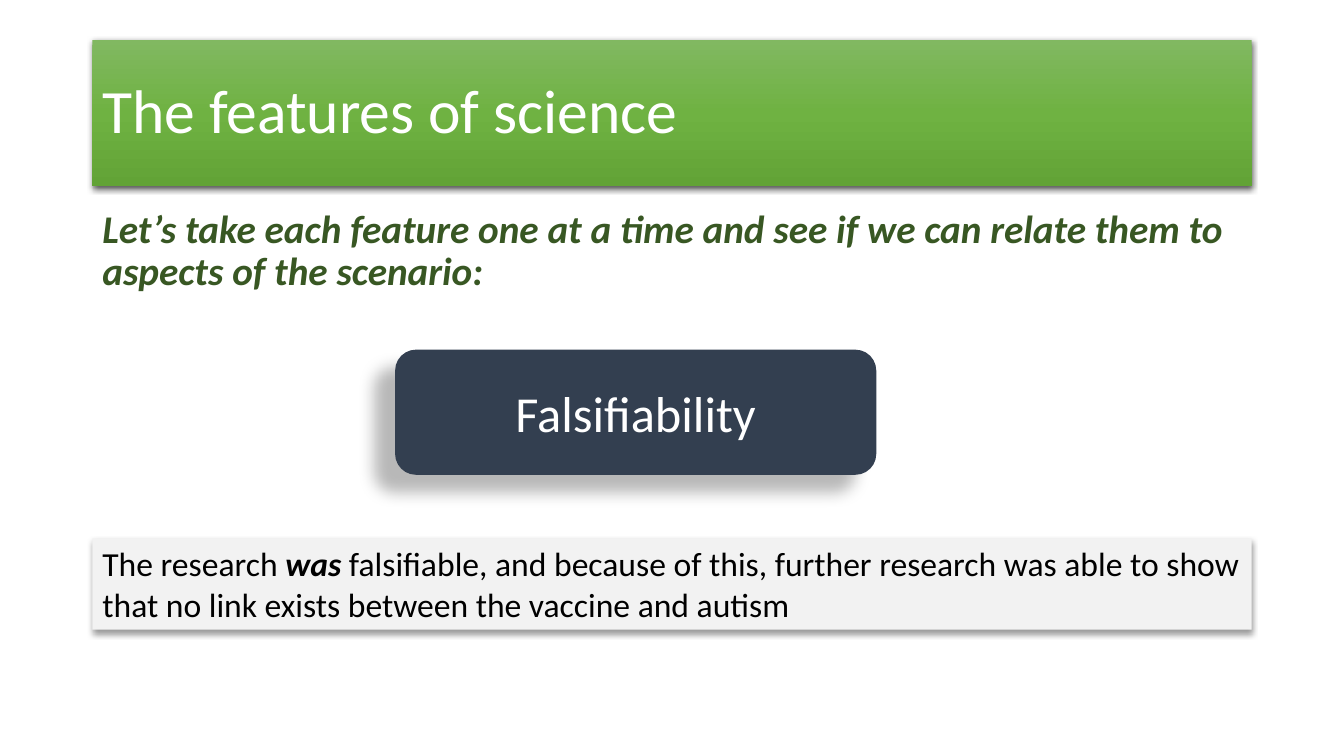
from lxml import etree
from pptx import Presentation
from pptx.dml.color import RGBColor
from pptx.enum.shapes import MSO_SHAPE
from pptx.enum.text import MSO_ANCHOR, PP_ALIGN
from pptx.oxml.ns import qn
from pptx.util import Inches, Pt

RECT, ROUNDED = MSO_SHAPE.RECTANGLE, MSO_SHAPE.ROUNDED_RECTANGLE
TOP, MIDDLE = MSO_ANCHOR.TOP, MSO_ANCHOR.MIDDLE
LEFT, CENTER = PP_ALIGN.LEFT, PP_ALIGN.CENTER

# Shares of the slide, in percent
MARGIN, CONTENT_WIDTH = 6.88, 86.25


def color(hex_string):
    return RGBColor.from_string(hex_string)


def add_color(parent, hex_string):
    return etree.SubElement(parent, qn("a:srgbClr"), val=hex_string)


class SlideBuilder:
    font = "Calibri"

    def __init__(self, deck):
        self.width, self.height = deck.slide_width, deck.slide_height
        self.slide = deck.slides.add_slide(deck.slide_layouts[6])

    def box(self, left, top, width, height):
        """Turn percentages of the slide into lengths."""
        return (int(self.width * left / 100), int(self.height * top / 100),
                int(self.width * width / 100), int(self.height * height / 100))

    def text(self, holder, runs, size, hex_string, anchor=TOP, align=LEFT,
             spacing=1.0, before=0, emphasis=False):
        """Write runs of (text, emphasised) as one paragraph."""
        frame = holder.text_frame
        frame.word_wrap, frame.vertical_anchor = True, anchor
        paragraph = frame.paragraphs[0]
        paragraph.alignment = align
        paragraph.line_spacing, paragraph.space_before = spacing, Pt(before)
        font = paragraph.font
        font.name, font.size = self.font, Pt(size)
        font.color.rgb = color(hex_string)
        font.bold = font.italic = emphasis
        for words, stressed in runs:
            run = paragraph.add_run()
            run.text = words
            if stressed:
                run.font.bold = run.font.italic = True

    def text_box(self, box, runs, size, hex_string, **style):
        holder = self.slide.shapes.add_textbox(*self.box(*box))
        self.text(holder, runs, size, hex_string, **style)

    def panel(self, kind, box, fills, shadow, runs, size, hex_string, **style):
        """Add a shape with one fill colour, or several for a gradient."""
        shape = self.slide.shapes.add_shape(kind, *self.box(*box))
        shape.line.fill.background()
        if len(fills) == 1:
            shape.fill.solid()
            shape.fill.fore_color.rgb = color(fills[0])
        else:
            self.gradient(shape, fills)
        self.shadow(shape, *shadow)
        self.text(shape, runs, size, hex_string, **style)

    def gradient(self, shape, fills):
        """Spread the colours evenly from top to bottom."""
        shape.fill.gradient()
        shape.fill.gradient_angle = 270
        stops = shape.element.spPr.find(".//" + qn("a:gsLst"))
        for stop in list(stops):
            stops.remove(stop)
        for index, hex_string in enumerate(fills):
            position = 100000 * index // (len(fills) - 1)
            add_color(etree.SubElement(stops, qn("a:gs"), pos=str(position)),
                      hex_string)

    def shadow(self, shape, opacity, blur, distance, angle):
        shape.shadow.inherit = False
        outer = etree.SubElement(
            shape.element.spPr.find(qn("a:effectLst")), qn("a:outerShdw"),
            blurRad=str(int(Pt(blur))), dist=str(int(Pt(distance))),
            dir=str(angle * 60000), algn="ctr", rotWithShape="0")
        etree.SubElement(add_color(outer, "000000"), qn("a:alpha"),
                         val=str(opacity * 1000))


def main():
    deck = Presentation()
    deck.slide_width, deck.slide_height = Inches(13.33), Inches(7.5)
    page = SlideBuilder(deck)

    # Introduction
    page.text_box(
        (MARGIN, 27.05, CONTENT_WIDTH, 14.95),
        [("Let’s take each feature one at a time and see if we can relate "
          "them to aspects of the scenario:", False)],
        28, "385723", spacing=0.9, before=10, emphasis=True)

    # Title banner
    page.panel(
        RECT, (MARGIN, 5.33, CONTENT_WIDTH, 19.33),
        ["81B861", "6FB242", "62A336"], (63, 4.5, 1.5, 90),
        [("The features of science", False)],
        44, "FFFFFF", anchor=MIDDLE, spacing=0.9)

    # Feature
    page.panel(
        ROUNDED, (29.4, 46.25, 35.8, 16.55), ["333F50"], (28, 11.8, 19.7, 141),
        [("Falsifiability", False)],
        36, "FFFFFF", anchor=MIDDLE, align=CENTER)

    # Explanation
    page.panel(
        RECT, (MARGIN, 71.2, CONTENT_WIDTH, 12.1), ["F2F2F2"], (40, 4, 3, 90),
        [("The research ", False), ("was", True),
         (" falsifiable, and because of this, further research was able to "
          "show that no link exists between the vaccine and autism", False)],
        24, "000000")

    deck.save("out.pptx")


if __name__ == "__main__":
    main()
